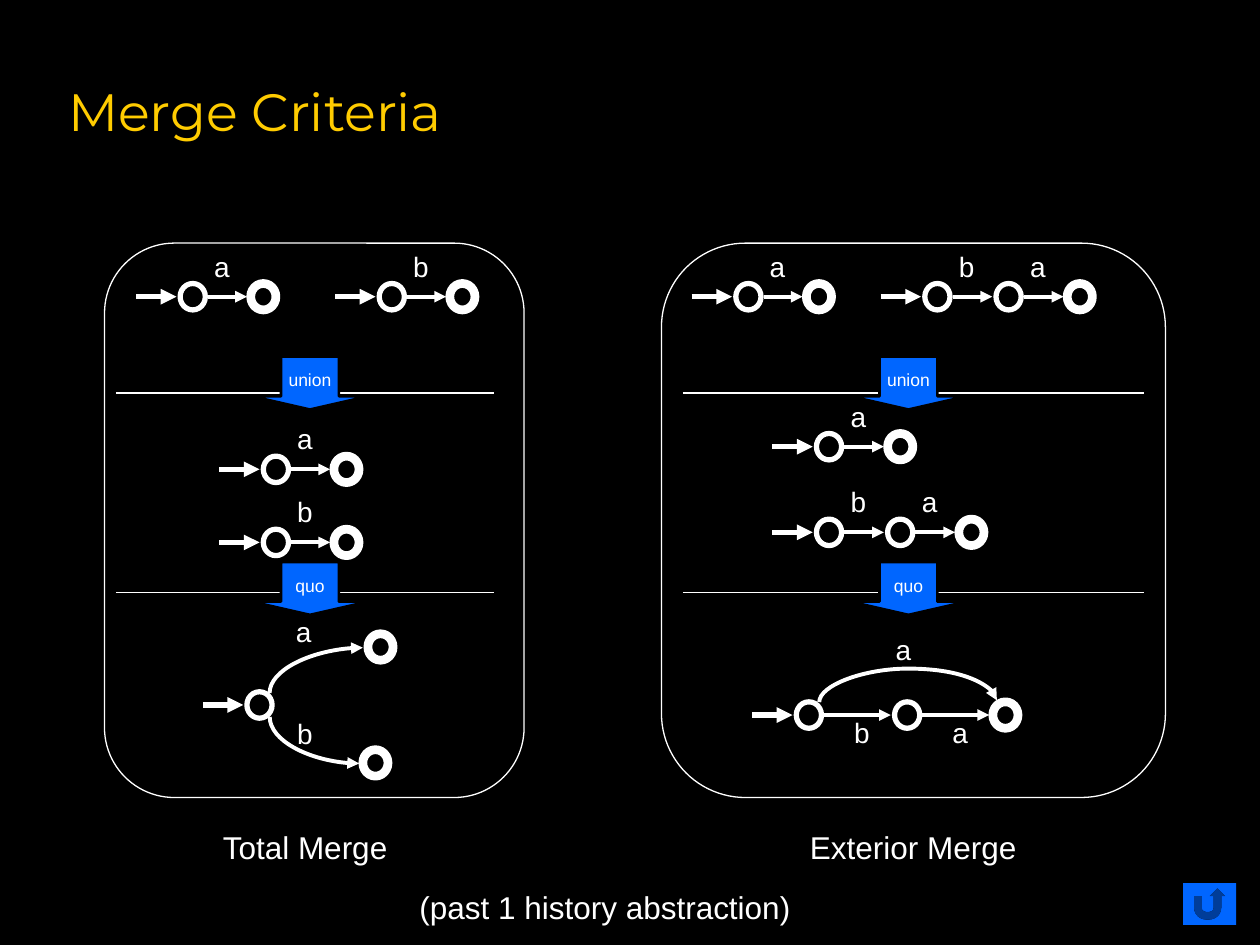
"""Build the Merge Criteria slide, comparing total and exterior merges of automata."""
from dataclasses import dataclass

from lxml.etree import SubElement
from pptx import Presentation
from pptx.dml.color import RGBColor
from pptx.enum.shapes import MSO_CONNECTOR, MSO_SHAPE
from pptx.enum.text import MSO_ANCHOR, MSO_AUTO_SIZE, PP_ALIGN
from pptx.oxml.ns import qn
from pptx.util import Inches, Pt


@dataclass(frozen=True)
class Theme:
    ground: RGBColor = RGBColor.from_string("000000")
    ink: RGBColor = RGBColor.from_string("FFFFFF")
    title: RGBColor = RGBColor.from_string("FFCC00")
    accent: RGBColor = RGBColor.from_string("0066FF")
    title_font: str = "Montserrat"
    body_font: str = "Arial"
    title_size: int = 30
    caption_size: int = 18
    label_size: int = 16
    step_size: int = 10
    thin: float = 0.75
    link: float = 2.25
    state: float = 3
    accepting: float = 5


theme = Theme()
deck = Presentation()
deck.slide_width, deck.slide_height = Inches(10), Inches(7.5)
column, row = deck.slide_width / 10, deck.slide_height / 7.5
page = deck.slides.add_slide(deck.slide_layouts[5])
page.background.fill.solid()
page.background.fill.fore_color.rgb = theme.ground


def place(left, top, width, height):
    return [round(left * column), round(top * row), round(width * column), round(height * row)]


def write(frame, text, size, color=theme.ink, font=theme.body_font):
    frame.text = text
    span = frame.paragraphs[0].runs[0]
    span.font.size, span.font.name = Pt(size), font
    span.font.color.rgb = color


title = page.shapes.title
title.left, title.top, title.width, title.height = place(0.44, 0.25, 8.5, 1.25)
write(title.text_frame, "Merge Criteria", theme.title_size, theme.title, theme.title_font)
title.text_frame.vertical_anchor = MSO_ANCHOR.MIDDLE
title.text_frame.paragraphs[0].alignment = PP_ALIGN.LEFT

panels = [(0.83, 3.33, 0.92, 3.92, 2), (5.25, 4, 5.42, 9.08, 6.75)]
steps = [("union", 2.83, 3.12), ("quo", 4.46, 4.7)]
above, below = (-0.11, -0.32), (-0.03, 0.06)
chains = [
    (1.43, 2.25, "a", 0.56, above), (3.01, 2.25, "b", 0.56, above),
    (2.09, 3.62, "a", 0.56, above), (2.09, 4.2, "b", 0.56, above),
    (1.96, 5.49, "", 0, above),
    (5.84, 2.25, "a", 0.56, above), (7.34, 2.25, "ba", 0.565, above),
    (6.48, 3.44, "a", 0.565, above), (6.48, 4.12, "ba", 0.565, above),
    (6.32, 5.57, "ba", 0.78, below),
]
curves = [
    ("curvedConnector2", 2.33, 4.95, 0.36, 0.74, False, None),
    ("curvedConnector2", 2.31, 5.52, 0.37, 0.71, True, None),
    ("curvedConnector3", 7.2, 4.86, 0.014, 1.41, False, 18.75),
]
circles = [(2.92, 5.03, theme.accepting), (2.88, 5.95, theme.accepting)]
labels = [("a", 2.25, 4.83), ("b", 2.26, 5.64), ("a", 7.01, 4.97)]
lines = []

for left, top, letters, gap, (shift, drop) in chains:
    middle = top + 0.105
    lines.append((left - 0.35, left - 0.03, middle, theme.state, True))
    for index in range(len(letters) + 1):
        last = index == len(letters) and letters
        circles.append((left + index * gap, top, theme.accepting if last else theme.state))
    for index, letter in enumerate(letters):
        start = left + index * gap
        lines.append((start + 0.22, start + gap - 0.03, middle, theme.link, True))
        labels.append((letter, start + gap / 2 + shift, top + drop))

for left, width, start, end, arrow_left in panels:
    panel = page.shapes.add_shape(MSO_SHAPE.ROUNDED_RECTANGLE, *place(left, 1.93, width, 4.4))
    panel.shadow.inherit = False
    panel.fill.background()
    panel.line.color.rgb, panel.line.width = theme.ink, Pt(theme.thin)
    for name, top, divider in steps:
        lines.append((start, end, divider, theme.thin, False))

connectors = []
for start, end, height, weight, pointed in lines:
    begin_x, begin_y, span_x, span_y = place(start, height, end - start, 0)
    connector = page.shapes.add_connector(
        MSO_CONNECTOR.STRAIGHT, begin_x, begin_y, begin_x + span_x, begin_y)
    connectors.append((connector, weight, pointed))

for preset, left, top, width, height, flipped, bend in curves:
    begin_x, begin_y, span_x, span_y = place(left, top, width, height)
    connector = page.shapes.add_connector(
        MSO_CONNECTOR.CURVE, begin_x, begin_y, begin_x + span_x, begin_y + span_y)
    properties = connector.element.spPr
    frame, geometry = properties.find(qn("a:xfrm")), properties.find(qn("a:prstGeom"))
    frame.set("rot", str(270 * 60000))
    if flipped:
        frame.set("flipH", "1")
    geometry.set("prst", preset)
    if bend:
        SubElement(geometry.find(qn("a:avLst")), qn("a:gd"),
                   name="adj1", fmla=f"val {round(bend * 100000)}")
    connectors.append((connector, theme.link, True))

for connector, weight, pointed in connectors:
    connector.line.color.rgb, connector.line.width = theme.ink, Pt(weight)
    if pointed:
        SubElement(connector.line._get_or_add_ln(), qn("a:tailEnd"), type="triangle")
    SubElement(connector.element.spPr, qn("a:effectLst"))

for left, top, weight in circles:
    circle = page.shapes.add_shape(MSO_SHAPE.OVAL, *place(left, top, 0.2, 0.21))
    circle.shadow.inherit = False
    circle.fill.background()
    circle.line.color.rgb, circle.line.width = theme.ink, Pt(weight)

texts = [(text, left, top, 0.32, 0.37, theme.label_size) for text, left, top in labels]
texts += [
    ("Total Merge", 1.67, 6.52, 1.53, 0.4, theme.caption_size),
    ("Exterior Merge", 6.33, 6.52, 1.84, 0.4, theme.caption_size),
    ("(past 1 history abstraction)", 3.23, 7, 3.15, 0.4, theme.caption_size),
]
for text, left, top, width, height, size in texts:
    box = page.shapes.add_textbox(*place(left, top, width, height))
    box.text_frame.word_wrap = False
    box.text_frame.auto_size = MSO_AUTO_SIZE.SHAPE_TO_FIT_TEXT
    write(box.text_frame, text, size)

for *edges, arrow_left in panels:
    for name, top, divider in steps:
        arrow = page.shapes.add_shape(MSO_SHAPE.DOWN_ARROW, *place(arrow_left, top, 0.92, 0.42))
        arrow.adjustments[0], arrow.adjustments[1] = 0.5, 0.25
        arrow.shadow.inherit = False
        arrow.fill.solid()
        arrow.fill.fore_color.rgb = theme.accent
        arrow.line.color.rgb, arrow.line.width = theme.ground, Pt(1.5)
        write(arrow.text_frame, name, theme.step_size)
        arrow.text_frame.word_wrap = False
        arrow.text_frame.vertical_anchor = MSO_ANCHOR.MIDDLE
        arrow.text_frame.paragraphs[0].alignment = PP_ALIGN.CENTER
        arrow.text_frame.paragraphs[0].space_before = Pt(2)

button = page.shapes.add_shape(MSO_SHAPE.ACTION_BUTTON_RETURN, *place(9.39, 7.01, 0.42, 0.33))
button.shadow.inherit = False
button.fill.solid()
button.fill.fore_color.rgb = theme.accent
button.line.fill.background()

deck.save("out.pptx")
